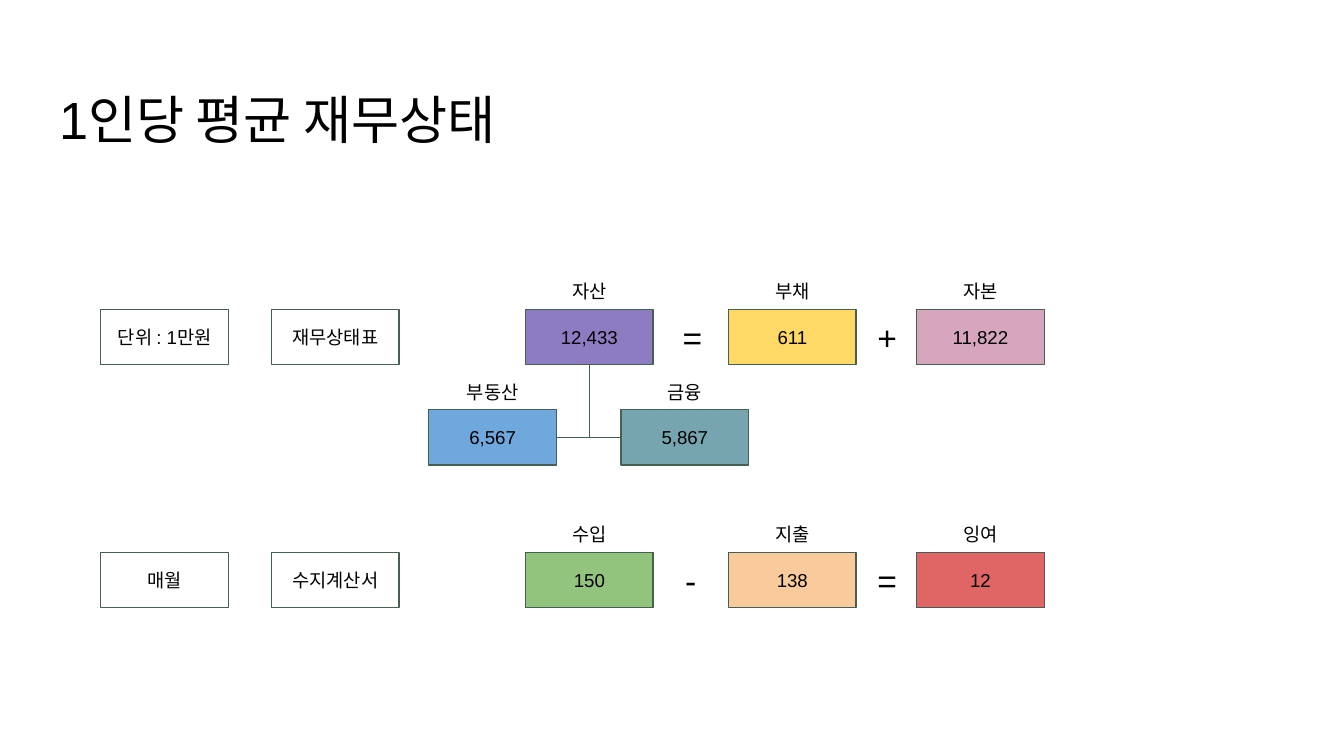
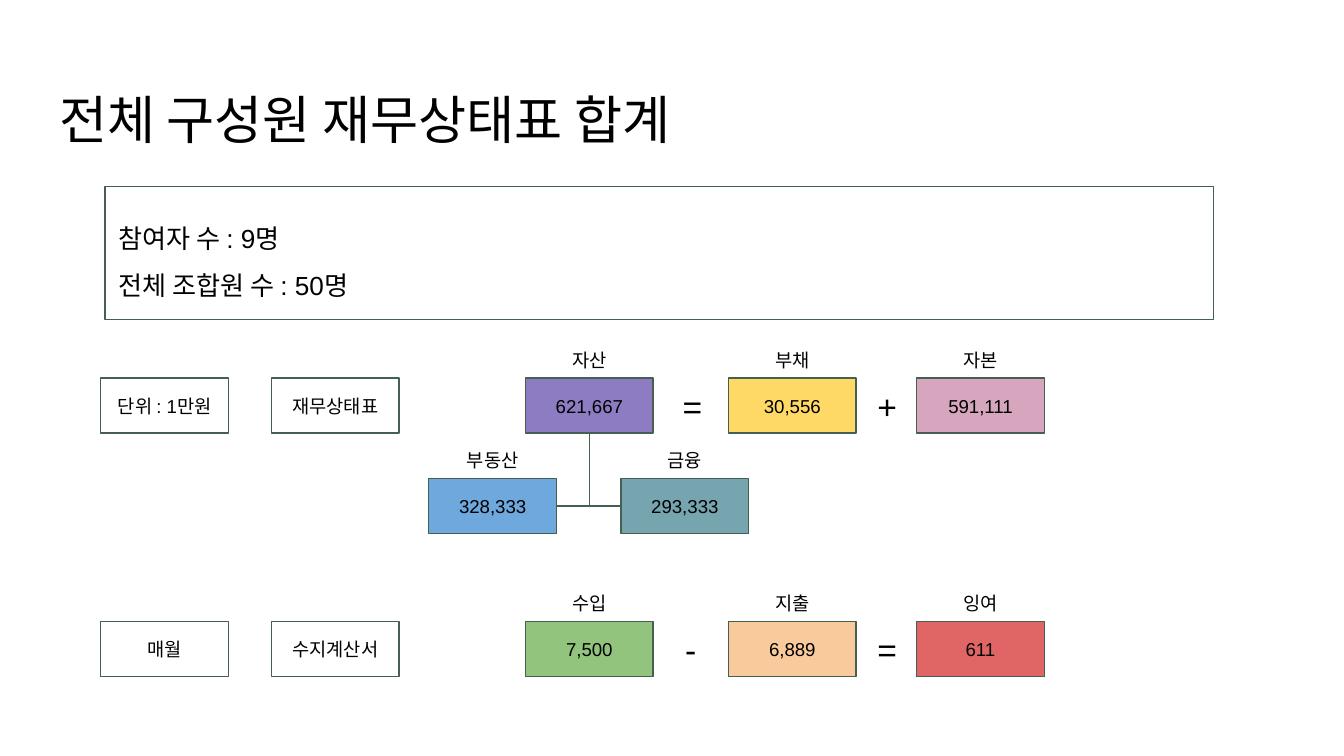
"""Build two slides that show average and total financial status."""
from dataclasses import dataclass
from typing import Any, NamedTuple

from lxml import etree
from pptx import Presentation
from pptx.dml.color import RGBColor
from pptx.enum.shapes import MSO_AUTO_SHAPE_TYPE, MSO_CONNECTOR
from pptx.enum.text import MSO_ANCHOR, MSO_AUTO_SIZE, PP_ALIGN
from pptx.oxml.ns import qn
from pptx.util import Inches, Pt

RECT = MSO_AUTO_SHAPE_TYPE.RECTANGLE
ELBOW = MSO_CONNECTOR.ELBOW
TOP, MIDDLE = MSO_ANCHOR.TOP, MSO_ANCHOR.MIDDLE
LEFT, CENTER = PP_ALIGN.LEFT, PP_ALIGN.CENTER

BLACK = RGBColor(0x00, 0x00, 0x00)
PINE = RGBColor(0x45, 0x5F, 0x51)
PURPLE = RGBColor(0x8E, 0x7C, 0xC3)
YELLOW = RGBColor(0xFF, 0xD9, 0x66)
PINK = RGBColor(0xD5, 0xA6, 0xBD)
BLUE = RGBColor(0x6F, 0xA8, 0xDC)
TEAL = RGBColor(0x76, 0xA5, 0xAF)
GREEN = RGBColor(0x93, 0xC4, 0x7D)
PEACH = RGBColor(0xF9, 0xCB, 0x9C)
RED = RGBColor(0xE0, 0x66, 0x66)

WIDTH, HEIGHT = Inches(10), Inches(5.625)
COL, ROW = WIDTH / 100, HEIGHT / 100
PAD = Inches(0.1)
FRAME = {"word_wrap": True, "auto_size": MSO_AUTO_SIZE.NONE,
         "margin_left": PAD, "margin_right": PAD,
         "margin_top": PAD, "margin_bottom": PAD}

BOX_W, BOX_H = 9.5, 7.3
SIGN_W, LABEL_H = 3.2, 4.8
CHILD, LOWER = 13.3, 32.2


class Area(NamedTuple):
    """A place in grid columns and rows."""
    x: float
    y: float
    w: float
    h: float

    def size(self) -> tuple[int, ...]:
        """Give the place in slide units."""
        return (round(self.x * COL), round(self.y * ROW),
                round(self.w * COL), round(self.h * ROW))


@dataclass(frozen=True)
class Style:
    """How a text looks."""
    size: float = 10
    align: Any = CENTER
    anchor: Any = MIDDLE
    space: float | None = None


@dataclass(frozen=True)
class Item:
    """A coloured value box with a label, placed from the first row."""
    label: str
    x: float
    drop: float
    fill: RGBColor


@dataclass(frozen=True)
class Mark:
    """A plain box or a sign, placed from the first row."""
    text: str
    x: float
    drop: float


@dataclass(frozen=True)
class Sheet:
    """The content of one slide."""
    title: str
    top: float
    values: tuple[str, ...]
    notes: tuple[str, ...] = ()


BODY, SIGN = Style(), Style(size=18)
HEAD = Style(size=28, align=LEFT, anchor=TOP)
NOTE = Style(size=14, align=LEFT, space=1.5)
TITLE_AREA = Area(3.4, 9.8, 93.2, 11.2)
NOTE_AREA = Area(7.8, 24.7, 82.5, 17.6)

ITEMS = (
    Item("자산", 39.1, 0, PURPLE),
    Item("부채", 54.2, 0, YELLOW),
    Item("자본", 68.2, 0, PINK),
    Item("부동산", 31.9, CHILD, BLUE),
    Item("금융", 46.2, CHILD, TEAL),
    Item("수입", 39.1, LOWER, GREEN),
    Item("지출", 54.2, LOWER, PEACH),
    Item("잉여", 68.2, LOWER, RED),
)
HEADS = (
    Mark("단위 : 1만원", 7.5, 0), Mark("재무상태표", 20.2, 0),
    Mark("매월", 7.5, LOWER), Mark("수지계산서", 20.2, LOWER),
)
SIGNS = (
    Mark("=", 49.8, 0), Mark("+", 64.3, 0),
    Mark("-", 49.8, LOWER), Mark("=", 64.3, LOWER),
)
SHEETS = (
    Sheet("1인당 평균 재무상태", 40.9,
          ("12,433", "611", "11,822", "6,567", "5,867", "150", "138", "12")),
    Sheet("전체 구성원 재무상태표 합계", 50,
          ("621,667", "30,556", "591,111", "328,333", "293,333",
           "7,500", "6,889", "611"),
          ("참여자 수 : 9명", "전체 조합원 수 : 50명")),
)


def apply(target: Any, values: dict[str, Any]) -> None:
    """Set each named attribute on the target."""
    for name, value in values.items():
        setattr(target, name, value)


def write(shape: Any, lines: tuple[str, ...], style: Style) -> None:
    """Fill a shape with one paragraph for each line."""
    frame = shape.text_frame
    apply(frame, FRAME | {"vertical_anchor": style.anchor})
    frame.text = "\n".join(lines)
    for para in frame.paragraphs:
        apply(para, {"alignment": style.align, "line_spacing": style.space})
        for run in para.runs:
            apply(run.font, {"name": "Arial", "size": Pt(style.size)})
            run.font.color.rgb = BLACK


def stroke(shape: Any) -> None:
    """Give a shape the shared thin line."""
    shape.line.color.rgb = PINE
    shape.line.width = Pt(0.75)


def box(slide: Any, area: Area, lines: tuple[str, ...],
        style: Style = BODY, fill: RGBColor | None = None) -> Any:
    """Draw a framed box with text."""
    shape = slide.shapes.add_shape(RECT, *area.size())
    shape.shadow.inherit = False
    if fill is None:
        shape.fill.background()
    else:
        shape.fill.solid()
        shape.fill.fore_color.rgb = fill
    stroke(shape)
    write(shape, lines, style)
    return shape


def label(slide: Any, area: Area, text: str, style: Style = BODY) -> None:
    """Draw a text without a frame."""
    write(slide.shapes.add_textbox(*area.size()), (text,), style)


def branch(slide: Any, root: Any, child: Any) -> None:
    """Join the foot of the root to the near side of a child."""
    left = child.left < root.left
    start = root.left + root.width // 2, root.top + root.height
    end = (child.left + (child.width if left else 0),
           child.top + child.height // 2)
    wide, tall = abs(end[0] - start[0]), end[1] - start[1]
    line = slide.shapes.add_connector(ELBOW, *start, *end)
    line.begin_connect(root, 2)
    line.end_connect(child, 3 if left else 1)
    apply(line, {"left": (start[0] + end[0] - tall) // 2,
                 "top": (start[1] + end[1] - wide) // 2,
                 "width": tall, "height": wide})
    stroke(line)
    props = line._element.spPr
    turn = props.find(qn("a:xfrm"))
    turn.set("rot", str((90 if left else 270) * 60000))
    turn.set("flipH", "0" if left else "1")
    props.find(qn("a:prstGeom")).set("prst", "bentConnector2")
    etree.SubElement(props, qn("a:effectLst"))


def draw(deck: Any, sheet: Sheet) -> None:
    """Add one slide for a sheet."""
    slide = deck.slides.add_slide(deck.slide_layouts[5])
    title = slide.shapes.title
    apply(title, dict(zip(("left", "top", "width", "height"),
                          TITLE_AREA.size())))
    write(title, (sheet.title,), HEAD)
    if sheet.notes:
        box(slide, NOTE_AREA, sheet.notes, NOTE)
    cells = {}
    for item, value in zip(ITEMS, sheet.values):
        y = sheet.top + item.drop
        cells[item.label] = box(slide, Area(item.x, y, BOX_W, BOX_H),
                                (value,), fill=item.fill)
        label(slide, Area(item.x, y - LABEL_H, BOX_W, LABEL_H), item.label)
    for mark in HEADS:
        box(slide, Area(mark.x, sheet.top + mark.drop, BOX_W, BOX_H),
            (mark.text,))
    for mark in SIGNS:
        label(slide, Area(mark.x, sheet.top + mark.drop, SIGN_W, BOX_H),
              mark.text, SIGN)
    for name in ("부동산", "금융"):
        branch(slide, cells["자산"], cells[name])


def main() -> None:
    """Build and save the deck."""
    deck = Presentation()
    apply(deck, {"slide_width": WIDTH, "slide_height": HEIGHT})
    for sheet in SHEETS:
        draw(deck, sheet)
    deck.save("out.pptx")


if __name__ == "__main__":
    main()
